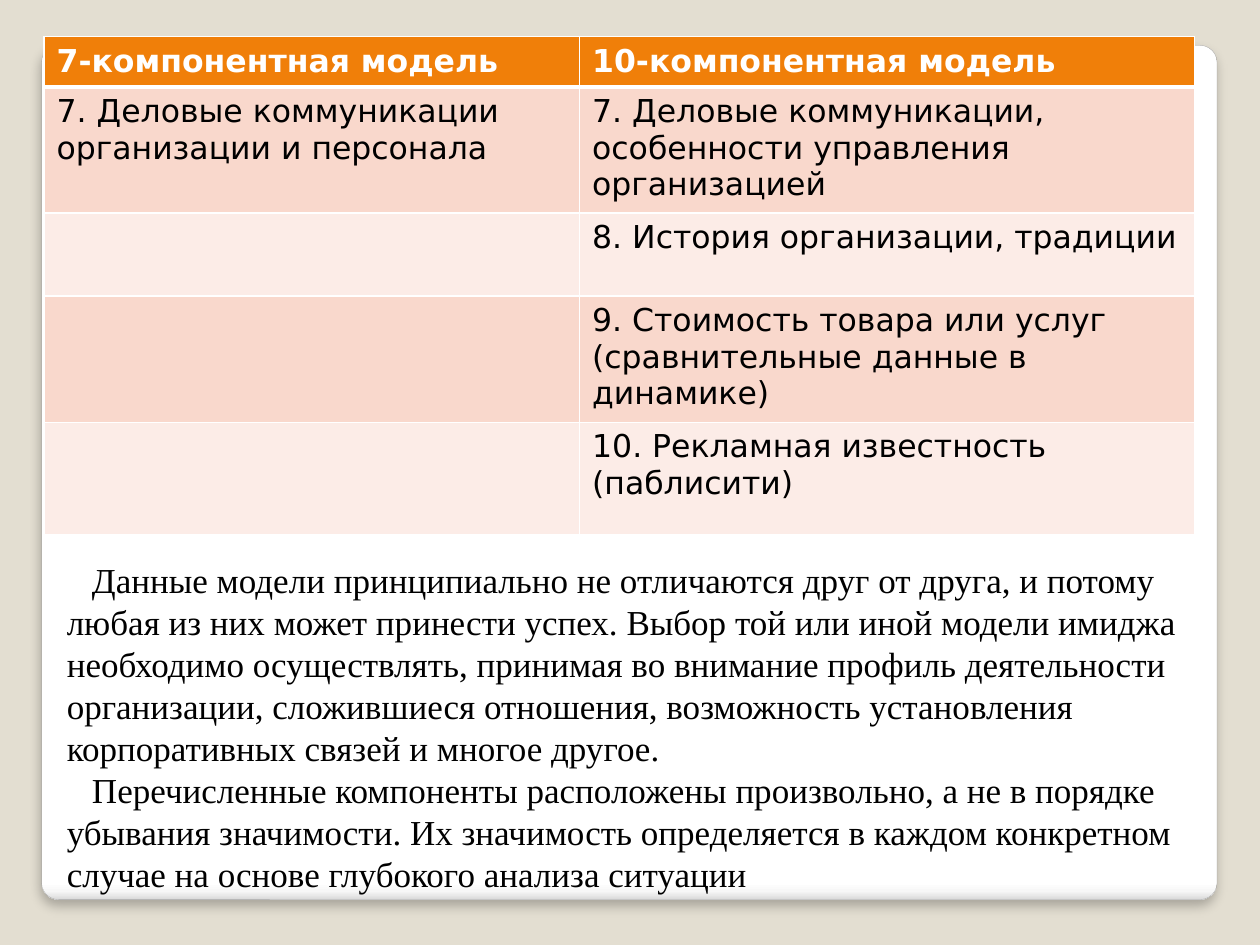
from dataclasses import dataclass

from lxml import etree
from pptx import Presentation
from pptx.dml.color import RGBColor
from pptx.enum import shapes, text
from pptx.oxml import parse_xml
from pptx.oxml.ns import nsdecls, qn
from pptx.util import Emu, Inches, Pt

WIDE, HIGH = Inches(10), Inches(7.5)

SAND = RGBColor(0xE3, 0xDE, 0xD1)
EDGE = RGBColor(0xA4, 0xA4, 0xA4)
WHITE = RGBColor(0xFF, 0xFF, 0xFF)
BLACK = RGBColor(0, 0, 0)
ORANGE = RGBColor(0xF0, 0x7F, 0x09)
ROSE = RGBColor(0xF9, 0xD8, 0xCC)
BLUSH = RGBColor(0xFC, 0xEC, 0xE7)
SHADES = [(0, "FFFFFF"), (98, "FFFFFF"), (99, "F7F7F7"), (100, "DADADA")]

HEAD = ("7-компонентная модель", "10-компонентная модель")
ROWS = [
    ("7. Деловые коммуникации организации и персонала",
     "7. Деловые коммуникации, особенности управления организацией"),
    ("", "8. История организации, традиции"),
    ("", "9. Стоимость товара или услуг (сравнительные данные в динамике)"),
    ("", "10. Рекламная известность (паблисити)"),
]
COLS = (4.25, 4.88)
TALL = (0.38, 0.98, 0.66, 0.95, 0.89)
NOTES = [
    "Данные модели принципиально не отличаются друг от друга, и потому любая "
    "из них может принести успех. Выбор той или иной модели имиджа необходимо "
    "осуществлять, принимая во внимание профиль деятельности организации, "
    "сложившиеся отношения, возможность установления корпоративных связей и "
    "многое другое.",
    "Перечисленные компоненты расположены произвольно, а не в порядке убывания "
    "значимости. Их значимость определяется в каждом конкретном случае на "
    "основе глубокого анализа ситуации",
]


@dataclass
class Box:
    """Place in percent of the slide's width and height."""
    left: float
    top: float
    width: float
    height: float

    def place(self) -> tuple:
        return (Emu(int(WIDE * self.left / 100)), Emu(int(HIGH * self.top / 100)),
                Emu(int(WIDE * self.width / 100)), Emu(int(HIGH * self.height / 100)))


@dataclass
class Look:
    """Format of one table row."""
    fill: RGBColor
    ink: RGBColor = BLACK
    bold: bool = False
    above: float = 1
    below: float = 1


CARD = Box(3.3, 4.8, 93.3, 90.4)
GRID = Box(3.5, 3.87, 91.3, 52.67)
BODY = Box(4.3, 58.4, 90.6, 37.2)
LOOKS = [Look(ORANGE, WHITE, True, below=3), Look(ROSE, above=3),
         Look(BLUSH), Look(ROSE), Look(BLUSH)]


def style(font, color: RGBColor, **values) -> None:
    for key, value in values.items():
        setattr(font, key, value)
    font.color.rgb = color


def draw_card(slide) -> None:
    card = slide.shapes.add_shape(shapes.MSO_SHAPE.ROUNDED_RECTANGLE, *CARD.place())
    card.adjustments[0] = 0.02
    card.line.color.rgb = EDGE
    card.line.width = Pt(0.16)
    # Gradient that darkens only at the bottom edge
    stops = "".join(f'<a:gs pos="{pos * 1000}"><a:srgbClr val="{tint}"/></a:gs>'
                    for pos, tint in SHADES)
    props = card.element.spPr
    props.find(qn("a:prstGeom")).addnext(parse_xml(
        f'<a:gradFill {nsdecls("a")}><a:gsLst>{stops}</a:gsLst>'
        '<a:lin ang="5400000" scaled="0"/></a:gradFill>'))
    # Soft shadow below the card
    props.append(parse_xml(
        f'<a:effectLst {nsdecls("a")}><a:outerShdw blurRad="{Pt(6)}" dist="{Pt(4)}" '
        'dir="5400000" algn="t" rotWithShape="0"><a:srgbClr val="000000">'
        '<a:alpha val="25000"/></a:srgbClr></a:outerShdw></a:effectLst>'))
    slide.shapes.element.insert(2, card.element)


def add_edge(cell, side: str, width: float) -> None:
    line = etree.SubElement(cell._tc.get_or_add_tcPr(), qn(f"a:ln{side}"), w=str(Pt(width)))
    fill = etree.SubElement(line, qn("a:solidFill"))
    etree.SubElement(fill, qn("a:srgbClr"), val=str(WHITE))


def draw_cell(cell, words: str, look: Look) -> None:
    for side, width in zip("LRTB", (1, 1, look.above, look.below)):
        add_edge(cell, side, width)
    cell.fill.solid()
    cell.fill.fore_color.rgb = look.fill
    if words:
        run = cell.text_frame.paragraphs[0].add_run()
        run.text = words
        style(run.font, look.ink, size=Pt(18), name="DejaVu Sans", bold=look.bold)


def draw_table(slide) -> None:
    lines = [HEAD, *ROWS]
    table = slide.shapes.add_table(len(lines), len(COLS), *GRID.place()).table
    for col, width in zip(table.columns, COLS):
        col.width = Inches(width)
    for row, height, words, look in zip(table.rows, TALL, lines, LOOKS):
        row.height = Inches(height)
        for cell, word in zip(row.cells, words):
            draw_cell(cell, word, look)


def draw_body(body) -> None:
    body.left, body.top, body.width, body.height = BODY.place()
    frame = body.text_frame
    frame.word_wrap = True
    frame.auto_size = text.MSO_AUTO_SIZE.SHAPE_TO_FIT_TEXT
    frame.text = "\n".join(NOTES)
    for para in frame.paragraphs:
        para.space_before = Pt(0)
        props = para._p.get_or_add_pPr()
        props.set("marL", "0")
        props.set("indent", str(Inches(0.2)))
        etree.SubElement(props, qn("a:buNone"))
        style(para.runs[0].font, BLACK, size=Pt(20), name="Times New Roman")


def main() -> None:
    deck = Presentation()
    deck.slide_width, deck.slide_height = WIDE, HIGH
    slide = deck.slides.add_slide(deck.slide_layouts[1])
    slide.background.fill.solid()
    slide.background.fill.fore_color.rgb = SAND
    # The slide has no title
    title = slide.shapes.title.element
    title.getparent().remove(title)
    draw_body(slide.placeholders[1])
    draw_table(slide)
    draw_card(slide)
    deck.save("out.pptx")


if __name__ == "__main__":
    main()
